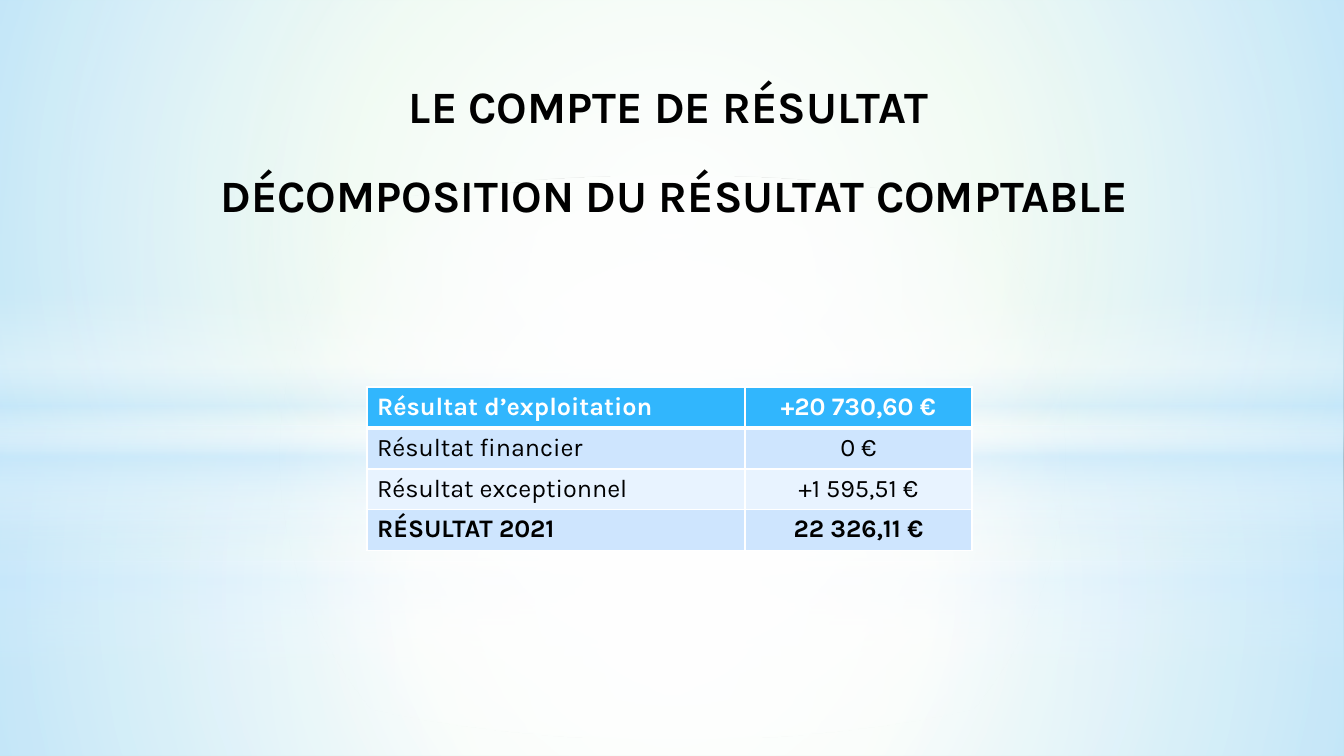
from dataclasses import dataclass

from lxml import etree
from pptx import Presentation
from pptx.dml.color import RGBColor
from pptx.enum.shapes import MSO_SHAPE
from pptx.enum.text import PP_ALIGN
from pptx.oxml import parse_xml
from pptx.oxml.ns import nsdecls
from pptx.util import Pt

RECT, OVAL = MSO_SHAPE.RECTANGLE, MSO_SHAPE.OVAL
LEFT, CENTER = PP_ALIGN.LEFT, PP_ALIGN.CENTER
SCALE = 914400 / 100.8
WIDE, HIGH = 1344, 756


@dataclass(frozen=True)
class Theme:
    font: str = "Karla"
    back: str = "9DE3AE"
    white: str = "FFFFFF"
    sky: str = "C6E7FC"
    black: str = "000000"
    head: str = "31B6FD"
    dark: str = "CEE5FE"
    light: str = "E8F3FF"
    title: int = 32
    body: int = 18


THEME = Theme()
ROUND = ('<a:path path="circle"><a:fillToRect l="50000" t="50000" '
         'r="50000" b="50000"/></a:path>')
DOWN = '<a:lin ang="5400000" scaled="0"/>'

# Gradient stops: position, colour and opacity, both in percent
LOWER = [(0, THEME.white, 91), (37, THEME.white, 76), (100, THEME.sky, 79)]
UPPER = [(0, THEME.white, 89), (48, THEME.white, 62), (100, THEME.sky, 79)]
BAND = [(0, THEME.white, 0), (29, THEME.white, 30), (45, THEME.sky, 40),
        (55, THEME.white, 26), (65, THEME.sky, 60), (100, THEME.white, 0)]

ROWS = [("Résultat d’exploitation", "+20 730,60 €"),
        ("Résultat financier", "0 €"),
        ("Résultat exceptionnel", "+1 595,51 €"),
        ("RÉSULTAT 2021", "22 326,11 €")]
FILLS = [THEME.head, THEME.dark, THEME.light, THEME.dark]


def px(*sizes):
    return [round(size * SCALE) for size in sizes]


def rgb(code):
    return RGBColor.from_string(code)


def add_glow(slide, kind, top, height, stops, shade=ROUND):
    """Add a full-width shape filled with a translucent gradient."""
    shape = slide.shapes.add_shape(kind, *px(0, top, WIDE, height))
    shape.shadow.inherit = False
    shape.line.fill.background()
    shape.fill.background()
    marks = "".join(
        f'<a:gs pos="{pos * 1000}"><a:srgbClr val="{color}">'
        f'<a:alpha val="{alpha * 1000}"/></a:srgbClr></a:gs>'
        for pos, color, alpha in stops)
    fill = parse_xml(f'<a:gradFill {nsdecls("a")} rotWithShape="1">'
                     f'<a:gsLst>{marks}</a:gsLst>{shade}</a:gradFill>')
    props = shape.element.spPr
    props.replace(props.find("{*}noFill"), fill)


def add_scene(slide, split, band, fade):
    """Add one set of lights, with its horizon at split."""
    add_glow(slide, RECT, split, HIGH - split, LOWER)
    add_glow(slide, RECT, 0, split, UPPER)
    add_glow(slide, RECT, band, 252, BAND, DOWN)
    add_glow(slide, OVAL, 176, 562,
             [(0, THEME.white, 100), (fade, THEME.white, 0)])


def set_text(frame, text, size, color, bold, align):
    frame.text = text
    line = frame.paragraphs[0]
    line.alignment = align
    font = line.runs[0].font
    font.name, font.size, font.bold = THEME.font, Pt(size), bold
    font.color.rgb = rgb(color)


def add_title(slide, text, box, wrap, align):
    frame = slide.shapes.add_textbox(*px(*box)).text_frame
    frame.word_wrap = wrap
    set_text(frame, text, THEME.title, THEME.black, True, align)


def set_edges(cell, top, bottom):
    """Draw white cell borders; top and bottom are widths in points."""
    props = cell._tc.get_or_add_tcPr()
    widths = {"lnL": 1, "lnR": 1, "lnT": top, "lnB": bottom}
    for spot, (name, width) in enumerate(widths.items()):
        edge = parse_xml(f'<a:{name} {nsdecls("a")} w="{Pt(width)}">'
                         f'<a:solidFill><a:srgbClr val="{THEME.white}"/>'
                         f'</a:solidFill></a:{name}>')
        props.insert(spot, edge)


def add_results(slide):
    frame = slide.shapes.add_table(len(ROWS), 2, *px(367, 387, 605, 162))
    table = frame.table
    for col, width in zip(table.columns, px(378, 227)):
        col.width = width
    for row, height in zip(table.rows, px(41, 41, 39, 41)):
        row.height = height
    for i, (texts, fill) in enumerate(zip(ROWS, FILLS)):
        color = THEME.black if i else THEME.white
        bold = i in (0, len(ROWS) - 1)
        for j, (text, align) in enumerate(zip(texts, (LEFT, CENTER))):
            cell = table.cell(i, j)
            set_text(cell.text_frame, text, THEME.body, color, bold, align)
            cell.fill.solid()
            cell.fill.fore_color.rgb = rgb(fill)
            set_edges(cell, 3 if i == 1 else 1, 1 if i else 3)


def main():
    deck = Presentation()
    deck.slide_width, deck.slide_height = px(WIDE, HIGH)
    slide = deck.slides.add_slide(deck.slide_layouts[6])
    slide.background.fill.solid()
    slide.background.fill.fore_color.rgb = rgb(THEME.back)
    add_scene(slide, 562, 415, 56)
    add_scene(slide, 426, 292, 54)
    add_title(slide, "LE COMPTE DE RÉSULTAT", (399, 74, 545, 65), False, LEFT)
    add_title(slide, "DÉCOMPOSITION DU RÉSULTAT COMPTABLE",
              (115, 163, 1119, 65), True, CENTER)
    add_results(slide)
    deck.save("out.pptx")


if __name__ == "__main__":
    main()
